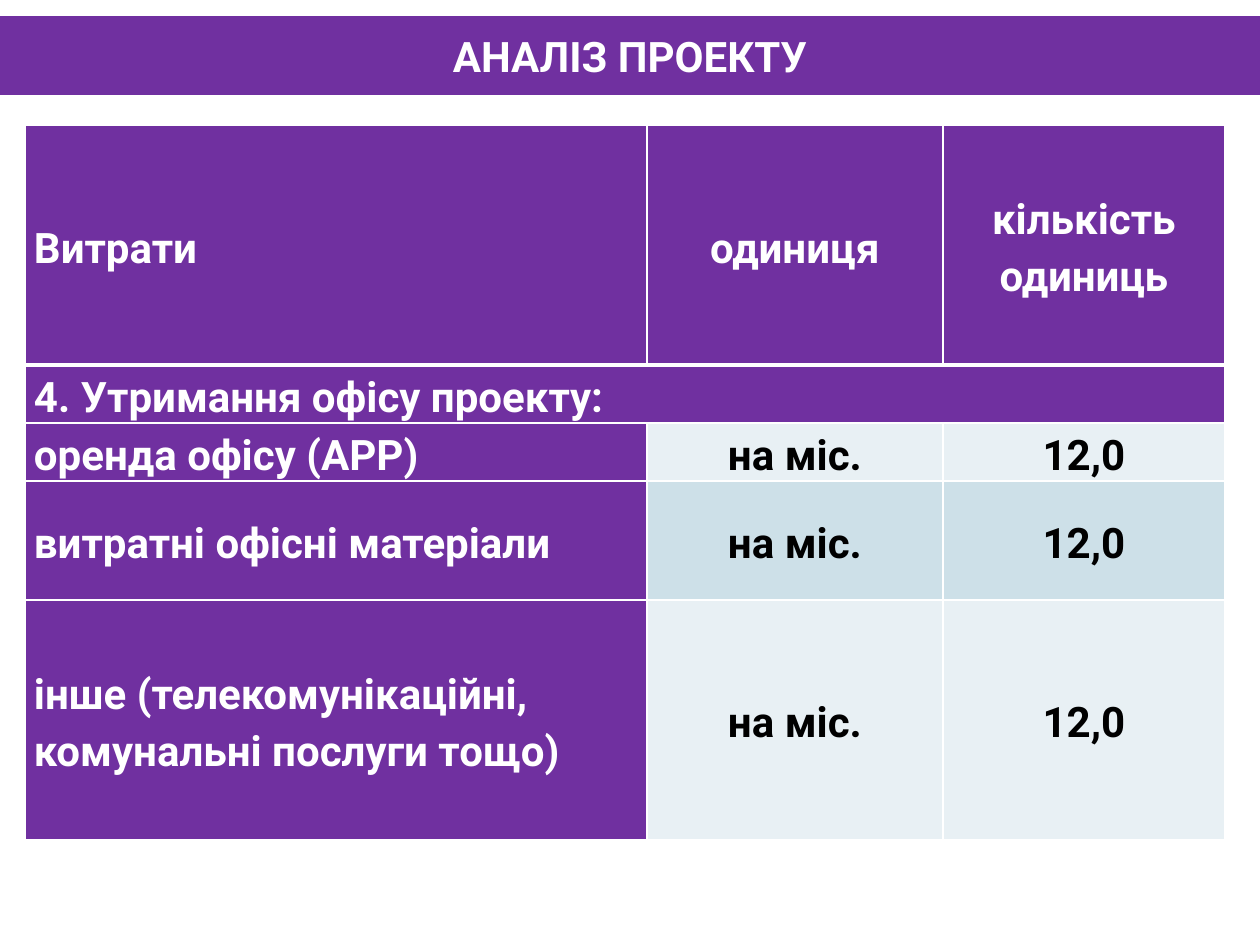
from dataclasses import dataclass

from lxml import etree
from pptx import Presentation
from pptx.dml.color import RGBColor
from pptx.enum import text
from pptx.oxml.ns import qn
from pptx.util import Emu, Pt

PX = 914400 / 126
FONT = "Roboto"
PURPLE, WHITE, BLACK = "7030A0", "FFFFFF", "000000"
PALE, BLUE = "E8F0F4", "CDE0E8"
COLUMN_WIDTHS = (622, 296, 282)


@dataclass(frozen=True)
class CostRow:
    texts: tuple[str, ...]
    height: int
    value_fill: str = PURPLE
    value_color: str = WHITE
    top: int = 1
    bottom: int = 1


COSTS = (
    CostRow(("Витрати", "одиниця", "кількість одиниць"), 240, bottom=3),
    CostRow(("4. Утримання офісу проекту:",), 58, top=3),
    CostRow(("оренда офісу (АРР)", "на міс.", "12,0"), 58, PALE, BLACK),
    CostRow(("витратні офісні матеріали", "на міс.", "12,0"), 119, BLUE, BLACK),
    CostRow(("інше (телекомунікаційні, комунальні послуги тощо)", "на міс.", "12,0"),
            240, PALE, BLACK),
)


def px(length: int) -> Emu:
    return Emu(round(length * PX))


def rgb(color: str) -> RGBColor:
    return RGBColor.from_string(color)


def write(frame, words: str, color: str, centred: bool, spacing: float = 1.0) -> None:
    frame.text = words
    paragraph = frame.paragraphs[0]
    paragraph.alignment = text.PP_ALIGN.CENTER if centred else text.PP_ALIGN.LEFT
    paragraph.line_spacing = spacing
    paragraph.space_before = Pt(0)
    font = paragraph.runs[0].font
    font.name, font.size, font.bold = FONT, Pt(24), True
    font.color.rgb = rgb(color)


def set_borders(cell, top: int, bottom: int) -> None:
    properties = cell._tc.get_or_add_tcPr()
    sides = (("L", 1), ("R", 1), ("T", top), ("B", bottom))
    for position, (side, width) in enumerate(sides):
        line = etree.Element(qn(f"a:ln{side}"), w=str(Pt(width)))
        solid = etree.SubElement(line, qn("a:solidFill"))
        etree.SubElement(solid, qn("a:srgbClr"), val=WHITE)
        properties.insert(position, line)


def draw_title(slide, words: str) -> None:
    title = slide.shapes.title
    title.left, title.top, title.width, title.height = px(0), px(16), px(1260), px(79)
    title.fill.solid()
    title.fill.fore_color.rgb = rgb(PURPLE)
    title.text_frame.vertical_anchor = text.MSO_ANCHOR.MIDDLE
    write(title.text_frame, words, WHITE, centred=True)


def draw_costs(slide, costs: tuple[CostRow, ...]) -> None:
    table = slide.shapes.add_table(
        len(costs), len(COLUMN_WIDTHS), px(25), px(125),
        px(sum(COLUMN_WIDTHS)), px(sum(cost.height for cost in costs)),
    ).table
    for column, width in zip(table.columns, COLUMN_WIDTHS):
        column.width = px(width)
    for row, cost in enumerate(costs):
        table.rows[row].height = px(cost.height)
        for column in range(len(COLUMN_WIDTHS)):
            cell = table.cell(row, column)
            cell.fill.solid()
            cell.fill.fore_color.rgb = rgb(cost.value_fill if column else PURPLE)
            set_borders(cell, cost.top, cost.bottom)
            cell.vertical_anchor = text.MSO_ANCHOR.MIDDLE
            cell.margin_left = cell.margin_right = px(9)
            cell.margin_top = cell.margin_bottom = 0
        for column, words in enumerate(cost.texts):
            color = cost.value_color if column else WHITE
            write(table.cell(row, column).text_frame, words, color, column > 0, 1.15)
        if len(cost.texts) == 1:
            table.cell(row, 0).merge(table.cell(row, len(COLUMN_WIDTHS) - 1))


def main() -> None:
    deck = Presentation()
    deck.slide_width, deck.slide_height = px(1260), px(945)
    slide = deck.slides.add_slide(deck.slide_layouts[5])
    draw_title(slide, "АНАЛІЗ ПРОЕКТУ")
    draw_costs(slide, COSTS)
    deck.save("out.pptx")


if __name__ == "__main__":
    main()
